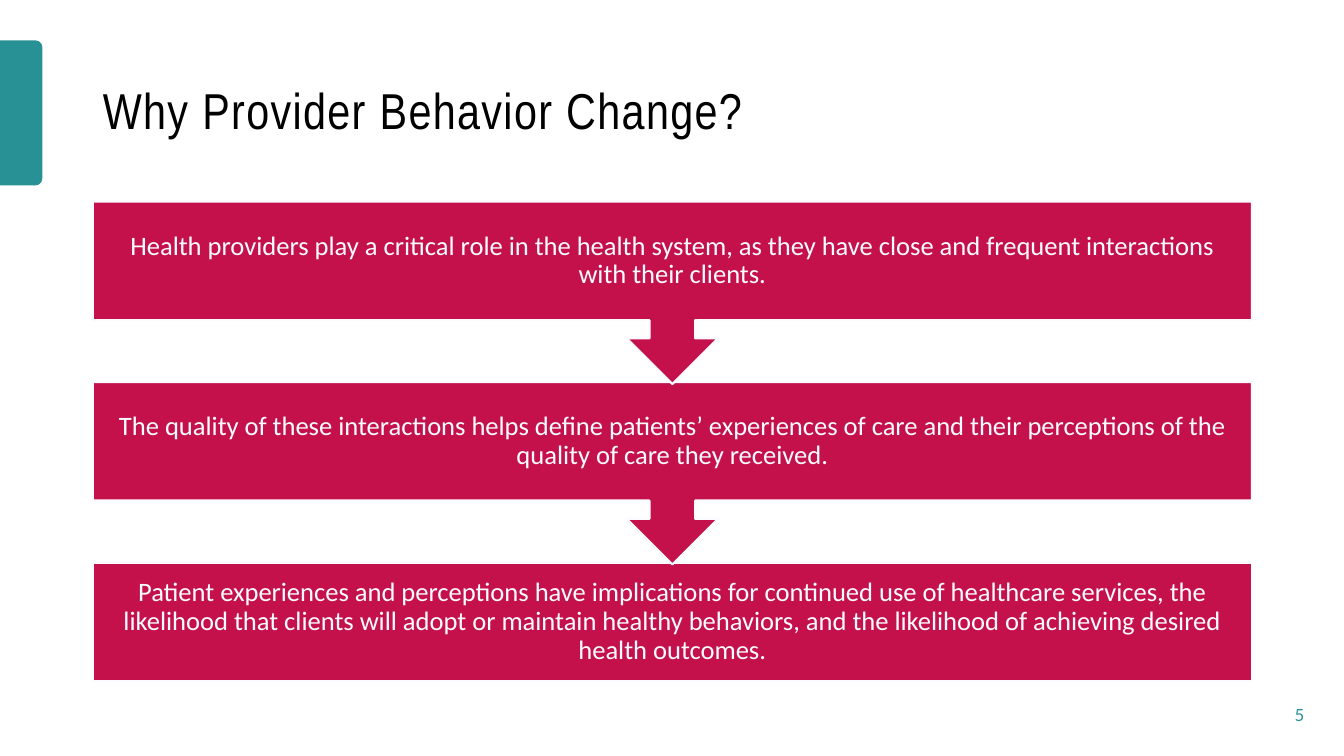
from pptx import Presentation
from pptx.dml.color import RGBColor
from pptx.enum.shapes import MSO_SHAPE
from pptx.enum.text import MSO_ANCHOR, MSO_AUTO_SIZE, PP_ALIGN
from pptx.util import Pt


def paint(color, hue):
    color.rgb = RGBColor.from_string(hue)


def write(frame, text, font, size, hue, align):
    frame.word_wrap = True
    frame.auto_size = MSO_AUTO_SIZE.NONE
    frame.vertical_anchor = MSO_ANCHOR.MIDDLE
    para = frame.paragraphs[0]
    para.alignment = align
    para.line_spacing = 0.9
    run = para.add_run()
    run.text = text
    run.font.name = font
    run.font.size = Pt(size)
    paint(run.font.color, hue)
    return run


TEAL, RED, PALE = "289195", "C4114C", "FAFBFF"
LEFT, WIDTH = 66.24, 828
TOP, STEP = 144, 128.88

deck = Presentation()
deck.slide_width, deck.slide_height = Pt(960), Pt(540)
slide = deck.slides.add_slide(deck.slide_layouts[5])
shapes = slide.shapes

# Teal tab on the left edge
tab = shapes.add_shape(MSO_SHAPE.ROUND_2_SAME_RECTANGLE,
                       Pt(-36.72), Pt(65.52), Pt(103.68), Pt(30.24))
tab.rotation = 90
tab.shadow.inherit = False
tab.fill.solid()
paint(tab.fill.fore_color, TEAL)
tab.line.fill.background()

# Title, with letters set 1 pt apart
title = shapes.title
title.left, title.top = Pt(LEFT), Pt(28.8)
title.width, title.height = Pt(WIDTH), Pt(104.4)
run = write(title.text_frame, "Why Provider Behavior Change?",
            "Arial Narrow", 36, "000000", PP_ALIGN.LEFT)
run.font._element.set("spc", "100")

# Slide number
number = shapes.add_textbox(Pt(883.44), Pt(496.8), Pt(55.44), Pt(28.8))
write(number.text_frame, "5", "Lato", 12, TEAL, PP_ALIGN.RIGHT)

# Steps, drawn from the last up so each arrow tip lies over the next box
CALL, BOX = MSO_SHAPE.DOWN_ARROW_CALLOUT, MSO_SHAPE.RECTANGLE
steps = [
    (CALL, 130.32, "Health providers play a critical role in the health system, "
     "as they have close and frequent interactions with their clients."),
    (CALL, 130.32, "The quality of these interactions helps define patients’ "
     "experiences of care and their perceptions of the quality of care "
     "they received."),
    (BOX, 84.96, "Patient experiences and perceptions have implications for "
     "continued use of healthcare services, the likelihood that clients will "
     "adopt or maintain healthy behaviors, and the likelihood of achieving "
     "desired health outcomes."),
]
for row, (kind, height, text) in reversed(list(enumerate(steps))):
    step = shapes.add_shape(kind, Pt(LEFT), Pt(TOP + row * STEP),
                            Pt(WIDTH), Pt(height))
    step.shadow.inherit = False
    step.fill.solid()
    paint(step.fill.fore_color, RED)
    paint(step.line.color, PALE)
    step.line.width = Pt(1.5)
    frame = step.text_frame
    frame.margin_left = frame.margin_right = Pt(10.8)
    frame.margin_top = frame.margin_bottom = Pt(10.8)
    write(frame, text, "Calibri", 19, PALE, PP_ALIGN.CENTER)

deck.save("out.pptx")
